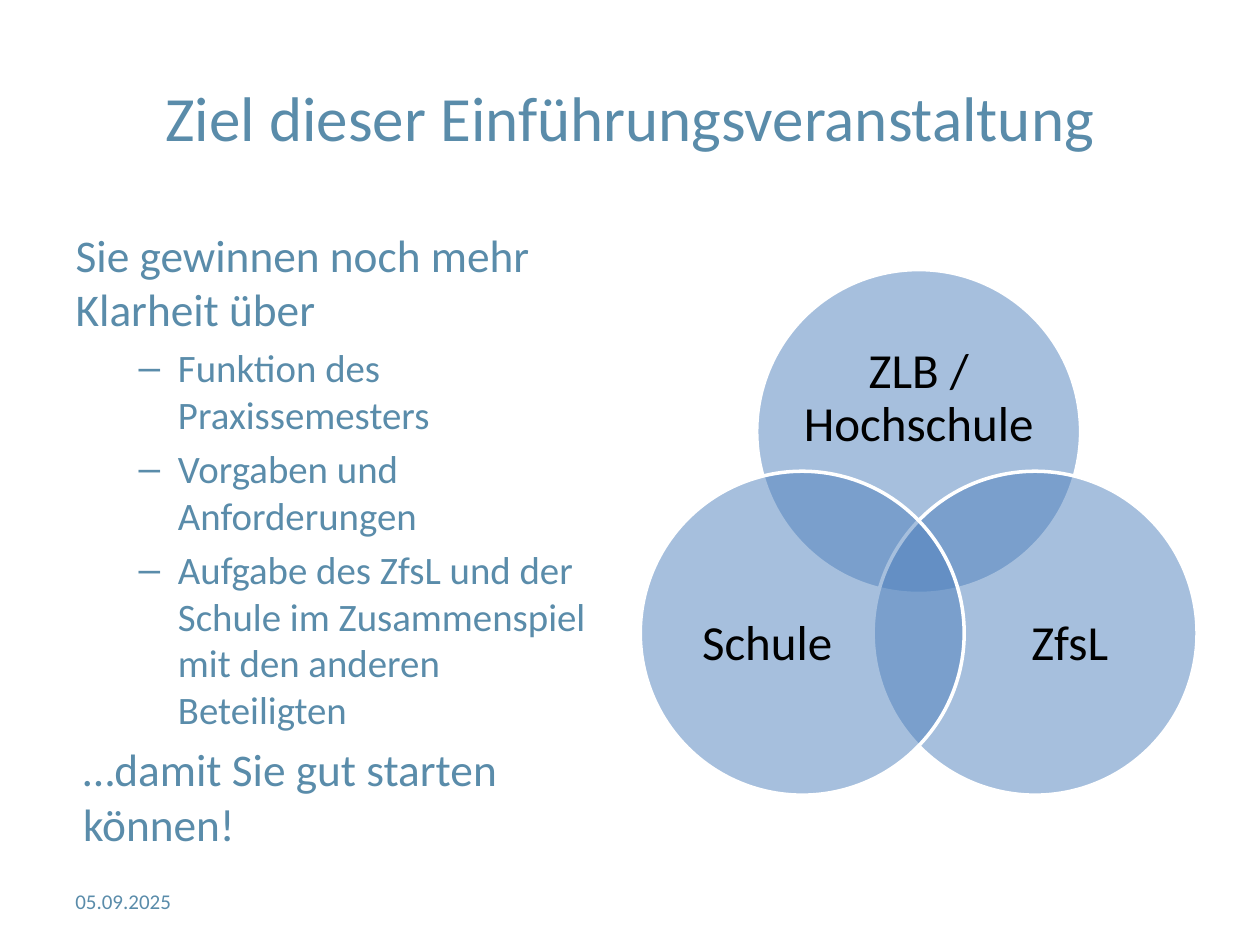
from math import cos, radians, sin

from lxml import etree
from pptx import Presentation
from pptx.dml.color import RGBColor
from pptx.enum.shapes import MSO_SHAPE
from pptx.enum.text import MSO_ANCHOR, MSO_AUTO_SIZE, PP_ALIGN
from pptx.oxml.ns import qn
from pptx.util import Cm, Pt

ELLIPSE = MSO_SHAPE.OVAL
MIDDLE = MSO_ANCHOR.MIDDLE
TOP = MSO_ANCHOR.TOP
NO_AUTOFIT = MSO_AUTO_SIZE.NONE
LEFT = PP_ALIGN.LEFT
CENTER = PP_ALIGN.CENTER

TITLE_LAYOUT = 1
GOALS = [
    "Funktion des Praxissemesters",
    "Vorgaben und Anforderungen",
    "Aufgabe des ZfsL und der Schule im Zusammenspiel mit den anderen Beteiligten",
]
PARTNERS = [
    ("ZLB / Hochschule", -90, (16.13, 6.58, 4.78, 2.92)),
    ("ZfsL", 30, (19.61, 11.2, 3.91, 3.58)),
    ("Schule", 150, (13.51, 11.2, 3.91, 3.58)),
]
VENN_CENTER = (18.52, 11.41)
VENN_OFFSET = 2.71
CIRCLE_SIZE = 6.53


def color(value):
    return RGBColor.from_string(value)


def write(paragraph, text, size, fill, font="Calibri", align=LEFT,
          before=None, line_spacing=None):
    paragraph.text = text
    paragraph.alignment = align
    paragraph.space_before = before
    paragraph.line_spacing = line_spacing
    paragraph.font.name = font
    paragraph.font.size = Pt(size)
    paragraph.font.color.rgb = color(fill)


def remove_bullet(paragraph, indent):
    properties = paragraph._p.get_or_add_pPr()
    properties.set("marL", str(Cm(indent)))
    properties.set("indent", "0")
    etree.SubElement(properties, qn("a:buNone"))


class SlideBuilder:
    accent = "5A8CAA"
    circle_fill = "4F81BD"
    circle_line = "FFFFFF"
    label_color = "000000"

    def __init__(self, slide):
        self.slide = slide

    def place(self, shape, box, anchor):
        shape.left, shape.top, shape.width, shape.height = map(Cm, box)
        frame = shape.text_frame
        frame.word_wrap = True
        frame.auto_size = NO_AUTOFIT
        frame.vertical_anchor = anchor
        return frame

    def title(self, text, box):
        frame = self.place(self.slide.shapes.title, box, MIDDLE)
        write(frame.paragraphs[0], text, 36, self.accent, align=CENTER)

    def body(self, opening, goals, closing, box):
        frame = self.place(self.slide.placeholders[1], box, TOP)
        first = frame.paragraphs[0]
        remove_bullet(first, 0)
        write(first, opening, 25.9, self.accent, before=Pt(0))
        for goal in goals:
            paragraph = frame.add_paragraph()
            paragraph.level = 1
            write(paragraph, goal, 22.2, self.accent)
        last = frame.add_paragraph()
        remove_bullet(last, 0.15)
        write(last, closing, 25.9, self.accent)

    def text_box(self, text, box, size, fill, margin=None, **style):
        shape = self.slide.shapes.add_textbox(*map(Cm, box))
        frame = self.place(shape, box, MIDDLE)
        if margin is not None:
            frame.margin_left = frame.margin_right = Cm(margin)
            frame.margin_top = frame.margin_bottom = Cm(margin)
        write(frame.paragraphs[0], text, size, fill, **style)

    def circle(self, center_x, center_y, size):
        box = (center_x - size / 2, center_y - size / 2, size, size)
        shape = self.slide.shapes.add_shape(ELLIPSE, *map(Cm, box))
        shape.shadow.inherit = False
        shape.fill.solid()
        shape.fill.fore_color.rgb = color(self.circle_fill)
        fill_color = shape._element.spPr.find(qn("a:solidFill"))[0]
        etree.SubElement(fill_color, qn("a:alpha"), val="50000")
        shape.line.color.rgb = color(self.circle_line)
        shape.line.width = Pt(2)

    def venn(self, partners, center, offset, size):
        for name, angle, label_box in partners:
            self.circle(center[0] + offset * cos(radians(angle)),
                        center[1] + offset * sin(radians(angle)), size)
            self.text_box(name, label_box, 28, self.label_color, margin=0,
                          align=CENTER, line_spacing=0.9)


def main():
    presentation = Presentation()
    presentation.slide_width = Cm(25.4)
    presentation.slide_height = Cm(19.05)
    layout = presentation.slide_layouts[TITLE_LAYOUT]
    builder = SlideBuilder(presentation.slides.add_slide(layout))
    builder.title("Ziel dieser Einführungsveranstaltung", (1.27, 0.76, 22.86, 3.18))
    builder.body("Sie gewinnen noch mehr Klarheit über", GOALS,
                 "…damit Sie gut starten können!", (1.27, 4.45, 11.23, 12.57))
    builder.text_box("05.09.2025", (1.27, 17.65, 5.92, 1.02), 12, builder.accent)
    builder.venn(PARTNERS, VENN_CENTER, VENN_OFFSET, CIRCLE_SIZE)
    presentation.save("out.pptx")


if __name__ == "__main__":
    main()
